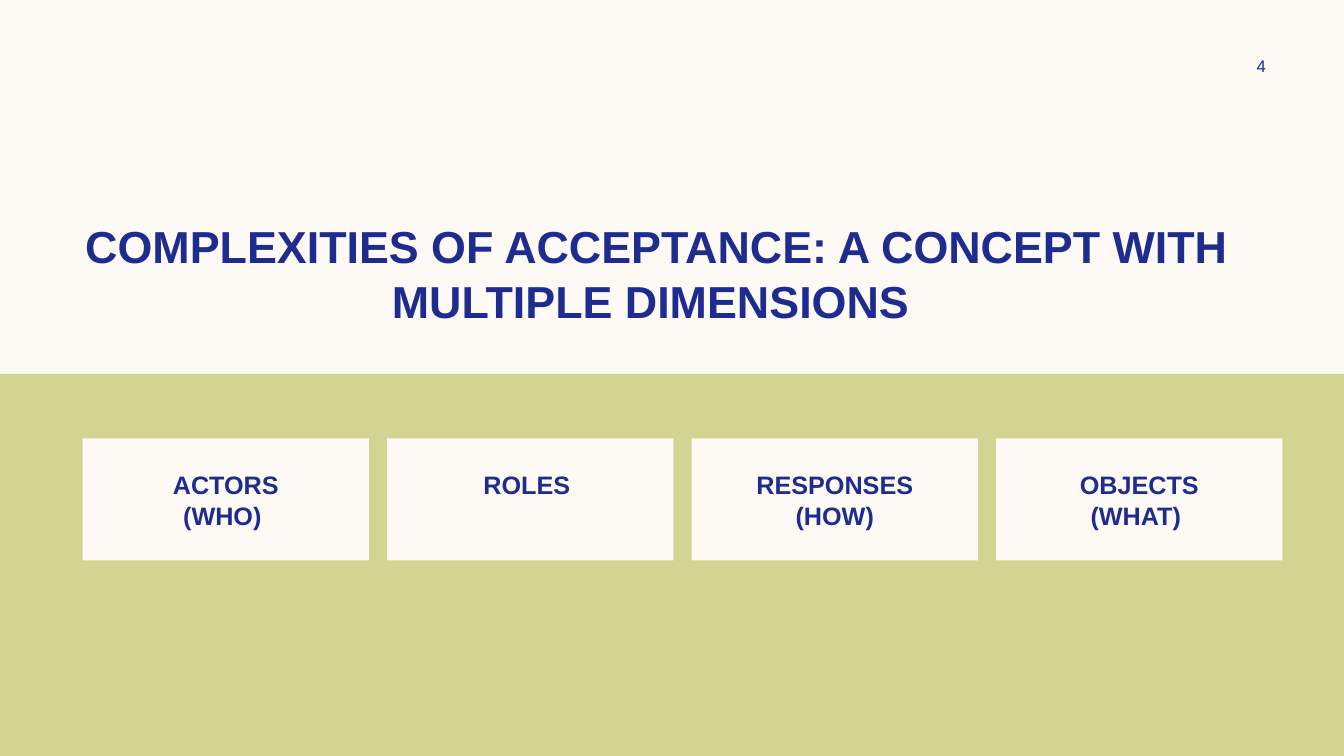
from pptx import Presentation
from pptx.dml.color import RGBColor
from pptx.enum.shapes import MSO_SHAPE as Shape
from pptx.enum.text import MSO_ANCHOR as Anchor, PP_ALIGN as Align
from pptx.util import Inches, Pt

CREAM, GREEN, NAVY = "FDFAF6", "D2D592", "1F2C8F"
CARDS = [("ACTORS", "(WHO) "), ("ROLES ",), ("RESPONSES", "(HOW)"), ("OBJECTS", "(WHAT) ")]


def color(hex_code):
    return RGBColor.from_string(hex_code)


def write(text_frame, lines, size, bold=True, anchor=Anchor.TOP):
    """Fill the frame with centred navy paragraphs, one per line."""
    text_frame.word_wrap = True
    text_frame.vertical_anchor = anchor
    for index, line in enumerate(lines):
        paragraph = text_frame.paragraphs[0] if index == 0 else text_frame.add_paragraph()
        paragraph.alignment = Align.CENTER
        paragraph.line_spacing = 1.03
        paragraph.space_before = Pt(0)
        run = paragraph.add_run()
        run.text = line
        run.font.name = "Arial"
        run.font.size = Pt(size)
        run.font.bold = bold
        run.font.color.rgb = color(NAVY)


def add_panel(slide, box, fill):
    shape = slide.shapes.add_shape(Shape.RECTANGLE, *map(Inches, box))
    shape.shadow.inherit = False
    shape.fill.solid()
    shape.fill.fore_color.rgb = color(fill)
    shape.line.fill.background()
    return shape


def place_title(slide, box):
    title = slide.shapes.title
    title.left, title.top, title.width, title.height = map(Inches, box)
    write(title.text_frame, ["COMPLEXITIES OF ACCEPTANCE: A CONCEPT WITH MULTIPLE DIMENSIONS "], 32)


def add_page_number(slide, box):
    number = slide.shapes.add_textbox(*map(Inches, box))
    write(number.text_frame, ["4"], 12, bold=False, anchor=Anchor.MIDDLE)


def add_cards(slide, box, gap=0.18):
    """Spread the cards evenly over the width of the box."""
    left, top, width, height = box
    card_width = (width - gap * (len(CARDS) - 1)) / len(CARDS)
    for index, lines in enumerate(CARDS):
        card_left = left + index * (card_width + gap)
        card = add_panel(slide, (card_left, top, card_width, height), CREAM)
        frame = card.text_frame
        frame.margin_left = frame.margin_right = 0
        frame.margin_top, frame.margin_bottom = Inches(0.3), Inches(0.05)
        write(frame, lines, 18)


def main():
    presentation = Presentation()
    presentation.slide_width, presentation.slide_height = Inches(13.33), Inches(7.5)
    slide = presentation.slides.add_slide(presentation.slide_layouts.get_by_name("Title Only"))
    slide.background.fill.solid()
    slide.background.fill.fore_color.rgb = color(CREAM)
    add_panel(slide, (0, 3.71, 13.33, 3.79), GREEN)
    place_title(slide, (0.68, 2.1, 11.67, 0.84))
    add_page_number(slide, (11.97, 0.5, 1.08, 0.3))
    add_cards(slide, (0.82, 4.35, 11.9, 1.21))
    presentation.save("out.pptx")


if __name__ == "__main__":
    main()
